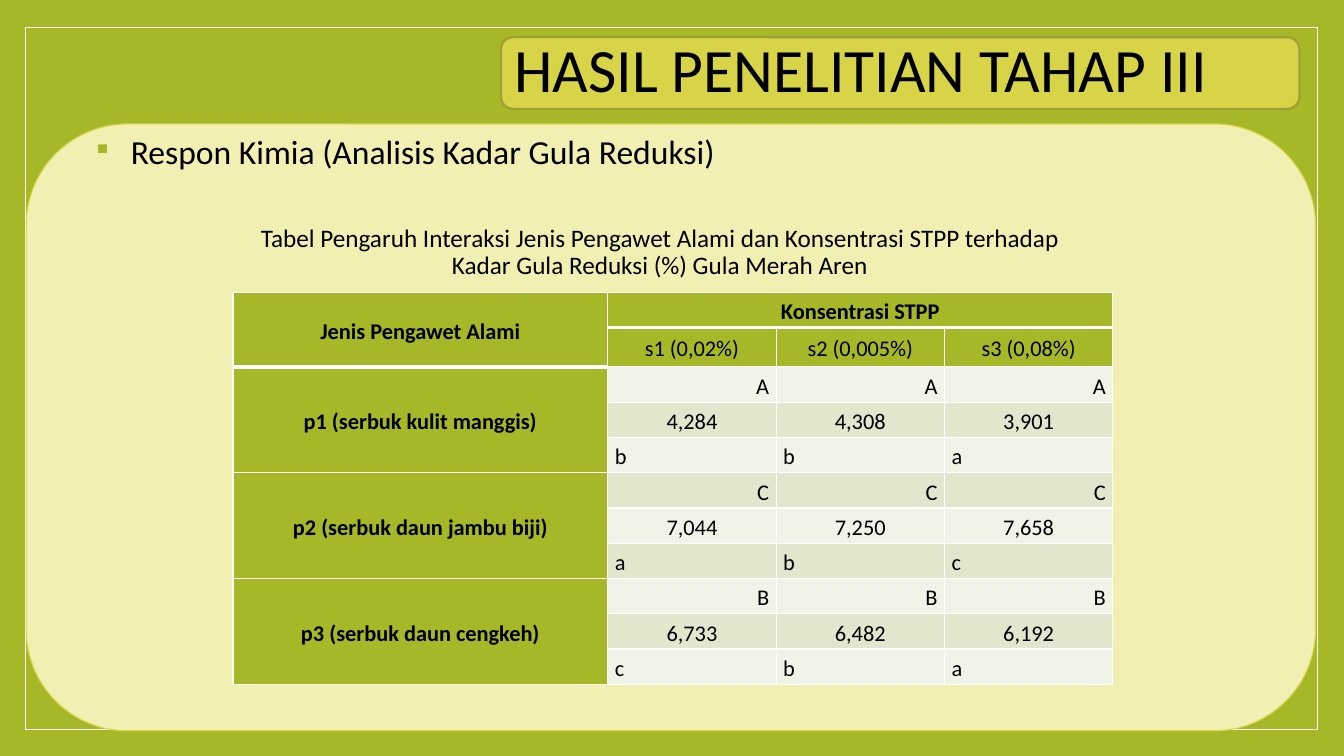
from collections import namedtuple
from dataclasses import dataclass

from lxml import etree
from pptx import Presentation, util as u
from pptx.dml.color import RGBColor
from pptx.enum import shapes, text
from pptx.oxml.ns import qn

Box = namedtuple("Box", "left top width height")


@dataclass(frozen=True)
class Theme:
    """Colours, font and type sizes of the slide."""
    green: str = "A6B727"
    lime: str = "D7D447"
    olive: str = "9F9D35"
    cream: str = "F1F0B2"
    bands: tuple = ("F1F3E8", "E1E6CD")
    white: str = "FFFFFF"
    ink: str = "000000"
    font: str = "Calibri"
    title: int = 44
    subtitle: int = 24
    caption: int = 18
    cell: int = 16


THEME = Theme()
WIDTH, HEIGHT = u.Inches(13.333), u.Inches(7.5)
ALIGN = text.PP_ALIGN
CONCENTRATIONS = ["s1 (0,02%)", "s2 (0,005%)", "s3 (0,08%)"]
PRESERVATIVES = [
    ("p1 (serbuk kulit manggis)", ["AAA", ["4,284", "4,308", "3,901"], "bba"]),
    ("p2 (serbuk daun jambu biji)", ["CCC", ["7,044", "7,250", "7,658"], "abc"]),
    ("p3 (serbuk daun cengkeh)", ["BBB", ["6,733", "6,482", "6,192"], "cba"]),
]
VALUE_ALIGNS = [ALIGN.RIGHT, ALIGN.CENTER, ALIGN.LEFT]


def area(left, top, width, height):
    """Turn percentages of the slide into a box."""
    return Box(*(int(share * side / 100) for share, side in
                 zip((left, top, width, height), (WIDTH, HEIGHT) * 2)))


def write(paragraph, wording, size, align, spacing=0.9, bold=False):
    """Fill a paragraph with styled wording."""
    paragraph.text = wording
    paragraph.alignment = align
    paragraph.line_spacing = spacing
    font = paragraph.font
    font.name, font.size, font.bold = THEME.font, u.Pt(size), bold
    font.color.rgb = RGBColor.from_string(THEME.ink)


def add_panel(slide, box, preset, fill, edge, weight):
    """Draw a filled and outlined panel."""
    panel = slide.shapes.add_shape(preset, *box)
    panel.shadow.inherit = False
    panel.fill.solid()
    panel.fill.fore_color.rgb = RGBColor.from_string(fill)
    panel.line.color.rgb = RGBColor.from_string(edge)
    panel.line.width = u.Pt(weight)
    return panel


def add_heading(slide, box):
    """Draw the title on its rounded plate."""
    plate = add_panel(slide, box, shapes.MSO_SHAPE.ROUNDED_RECTANGLE,
                      THEME.lime, THEME.olive, 1.5)
    plate.text_frame.vertical_anchor = text.MSO_ANCHOR.MIDDLE
    write(plate.text_frame.paragraphs[0], "HASIL PENELITIAN TAHAP III",
          THEME.title, ALIGN.JUSTIFY)


def add_bullet(paragraph):
    """Give a paragraph a hanging square bullet."""
    properties = paragraph._p.get_or_add_pPr()
    properties.set("marL", str(u.Inches(0.38)))
    properties.set("indent", str(-u.Inches(0.38)))
    colour = etree.SubElement(properties, qn("a:buClr"))
    etree.SubElement(colour, qn("a:srgbClr"), val=THEME.green)
    etree.SubElement(properties, qn("a:buSzPct"), val="80000")
    etree.SubElement(properties, qn("a:buChar"), char="▪")


def add_statement(slide, box, wording, size, align, bulleted=False):
    """Place one wrapped paragraph in the box."""
    frame = slide.shapes.add_textbox(*box).text_frame
    frame.word_wrap = True
    statement = frame.paragraphs[0]
    if bulleted:
        add_bullet(statement)
    write(statement, wording, size, align)
    statement.space_before = u.Pt(14)


def set_borders(cell, weights):
    """Draw white cell edges in left, right, top, bottom order."""
    properties = cell._tc.get_or_add_tcPr()
    for side, weight in zip("LRTB", weights):
        edge = etree.SubElement(properties, qn(f"a:ln{side}"), w=str(u.Pt(weight)))
        fill = etree.SubElement(edge, qn("a:solidFill"))
        etree.SubElement(fill, qn("a:srgbClr"), val=THEME.white)


def fill_cell(cell, wording, align=ALIGN.CENTER, bold=False):
    """Write one table cell."""
    write(cell.text_frame.paragraphs[0], wording, THEME.cell, align, 1.15, bold)


def style_grid(table):
    """Set fills, borders and margins of every cell."""
    heavy_below = {(0, 0), (1, 0), (0, 1), (0, 2), (0, 3)}
    for r, row in enumerate(table.rows):
        for c, cell in enumerate(row.cells):
            set_borders(cell, (1, 1, 3 if (r - 1, c) in heavy_below else 1,
                               3 if (r, c) in heavy_below else 1))
            cell.fill.solid()
            colour = THEME.green if r < 2 or c == 0 else THEME.bands[r % 2]
            cell.fill.fore_color.rgb = RGBColor.from_string(colour)
            cell.margin_left = cell.margin_right = u.Inches(0.07)
            cell.margin_top = cell.margin_bottom = 0
            cell.vertical_anchor = text.MSO_ANCHOR.MIDDLE


def add_results(slide, box):
    """Build the table of reducing sugar content."""
    column_shares = [0.426] + [0.574 / 3] * 3
    row_shares = [0.09, 0.1] + [0.09] * 9
    table = slide.shapes.add_table(len(row_shares), len(column_shares), *box).table
    for column, share in zip(table.columns, column_shares):
        column.width = int(box.width * share)
    for row, share in zip(table.rows, row_shares):
        row.height = int(box.height * share)
    style_grid(table)

    table.cell(0, 0).merge(table.cell(1, 0))
    table.cell(0, 1).merge(table.cell(0, 3))
    fill_cell(table.cell(0, 0), "Jenis Pengawet Alami", bold=True)
    fill_cell(table.cell(0, 1), "Konsentrasi STPP", bold=True)
    for c, concentration in enumerate(CONCENTRATIONS, 1):
        fill_cell(table.cell(1, c), concentration)
    for group, (preservative, lines) in enumerate(PRESERVATIVES):
        first = 2 + 3 * group
        table.cell(first, 0).merge(table.cell(first + 2, 0))
        fill_cell(table.cell(first, 0), preservative, bold=True)
        for r, (values, align) in enumerate(zip(lines, VALUE_ALIGNS), first):
            for c, value in enumerate(values, 1):
                fill_cell(table.cell(r, c), value, align)


def main():
    """Build and save the slide."""
    deck = Presentation()
    deck.slide_width, deck.slide_height = WIDTH, HEIGHT
    slide = deck.slides.add_slide(deck.slide_layouts[6])
    slide.background.fill.solid()
    slide.background.fill.fore_color.rgb = RGBColor.from_string(THEME.green)

    add_panel(slide, area(1.88, 3.6, 96.15, 92.93),
              shapes.MSO_SHAPE.RECTANGLE, THEME.green, THEME.white, 1)
    add_heading(slide, area(37.28, 4.93, 59.4, 9.47))
    add_panel(slide, area(1.95, 16.4, 95.93, 80.27),
              shapes.MSO_SHAPE.ROUNDED_RECTANGLE, THEME.cream, THEME.lime, 0.79)
    add_statement(slide, area(6.15, 17.33, 49.13, 5.47),
                  "Respon Kimia (Analisis Kadar Gula Reduksi)",
                  THEME.subtitle, ALIGN.LEFT, bulleted=True)
    add_statement(slide, area(17.33, 29.2, 63.53, 9.73),
                  "Tabel Pengaruh Interaksi Jenis Pengawet Alami dan Konsentrasi "
                  "STPP terhadap Kadar Gula Reduksi (%) Gula Merah Aren",
                  THEME.caption, ALIGN.CENTER)
    add_results(slide, area(17.33, 38.67, 65.48, 51.87))
    deck.save("out.pptx")


if __name__ == "__main__":
    main()
